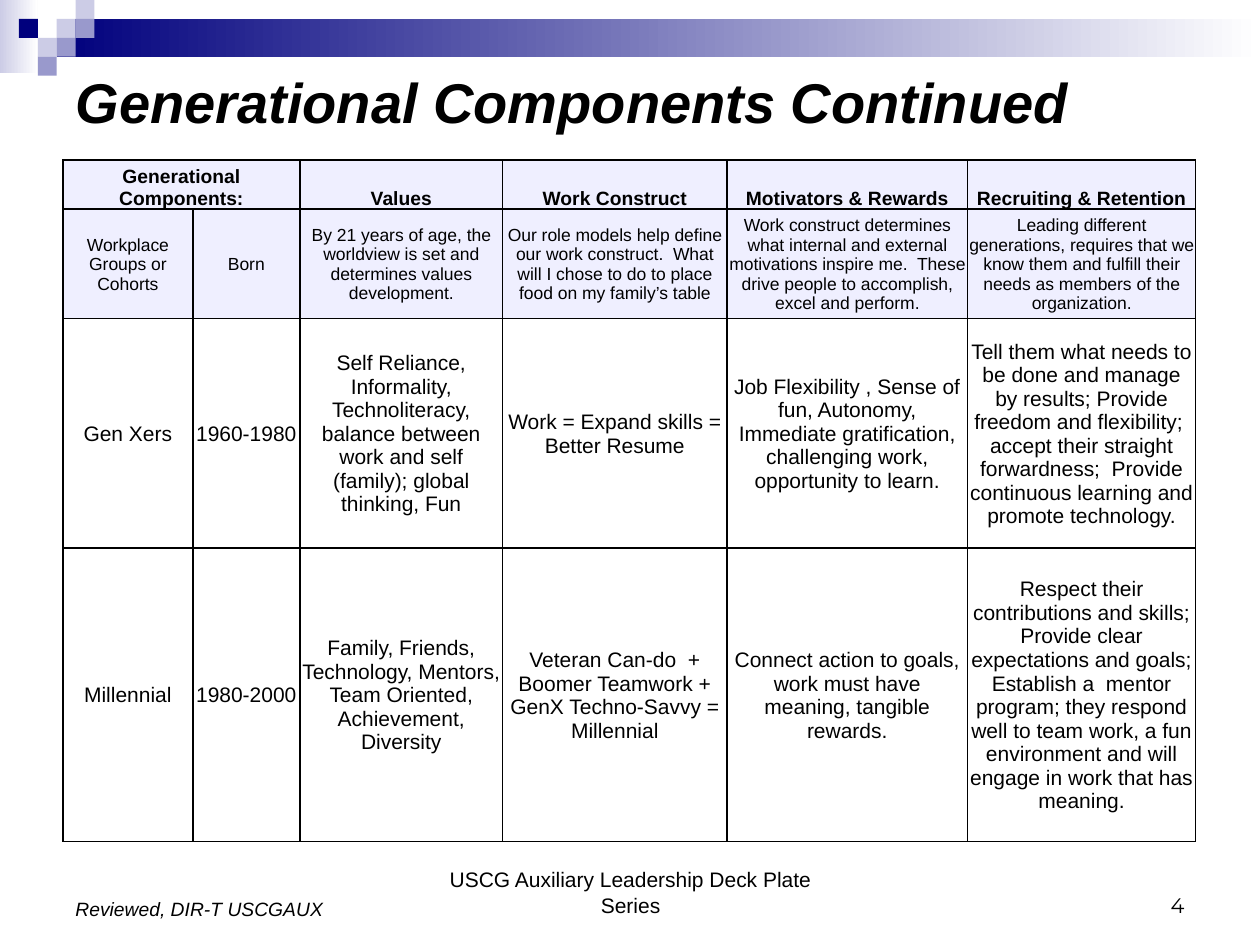
"""Build the slide of generational components for Gen Xers and Millennials."""
from dataclasses import dataclass

from lxml import etree
from pptx import Presentation
from pptx.dml.color import RGBColor
from pptx.enum.shapes import MSO_SHAPE
from pptx.enum.text import MSO_ANCHOR, MSO_AUTO_SIZE, PP_ALIGN
from pptx.oxml.ns import qn
from pptx.util import Inches, Pt

RECTANGLE = MSO_SHAPE.RECTANGLE
LEFT, CENTER, RIGHT = PP_ALIGN.LEFT, PP_ALIGN.CENTER, PP_ALIGN.RIGHT
MIDDLE, BOTTOM = MSO_ANCHOR.MIDDLE, MSO_ANCHOR.BOTTOM


@dataclass(frozen=True)
class Theme:
    navy: str = "00007D"
    violet: str = "9999CC"
    lavender: str = "CCCCE6"
    header: str = "EFEFFF"
    white: str = "FFFFFF"
    black: str = "000000"
    font: str = "Arial"
    number_font: str = "Montserrat"
    title_size: int = 32
    body_size: int = 12
    heading_size: int = 11
    note_size: int = 10


theme = Theme()


def format_text(frame, text, size, alignment, anchor, font=theme.font, bold=False, italic=False):
    frame.text = text
    frame.vertical_anchor = anchor
    paragraph = frame.paragraphs[0]
    paragraph.alignment = alignment
    paragraph.font.name = font
    paragraph.font.size = Pt(size)
    paragraph.font.bold = bold
    paragraph.font.italic = italic
    paragraph.font.color.rgb = RGBColor.from_string(theme.black)


def draw_borders(cell):
    properties = cell._tc.get_or_add_tcPr()
    for side in ("a:lnL", "a:lnR", "a:lnT", "a:lnB"):
        line = etree.SubElement(properties, qn(side), w=str(Pt(1)))
        fill = etree.SubElement(line, qn("a:solidFill"))
        etree.SubElement(fill, qn("a:srgbClr"), val=theme.black)


presentation = Presentation()
presentation.slide_width = Inches(10)
presentation.slide_height = Inches(7.5)
slide = presentation.slides.add_slide(presentation.slide_layouts[5])

GRID = Inches(0.15)
blocks = [
    (0, 0, 2, 3.87, theme.lavender, theme.white),
    (3, 1, 63.67, 2, theme.navy, theme.white),
    (3, 1, 1, 1, theme.lavender, None),
    (4, 0, 1, 1, theme.lavender, None),
    (4, 1, 1, 1, theme.violet, None),
    (2, 2, 1, 1, theme.lavender, None),
    (1, 1, 1, 1, theme.navy, None),
    (3, 2, 1, 1, theme.violet, None),
    (2, 3, 1, 1, theme.violet, None),
]
for column, row, width, height, color, end_color in blocks:
    block = slide.shapes.add_shape(
        RECTANGLE, *(int(GRID * cells) for cells in (column, row, width, height)))
    block.shadow.inherit = False
    block.line.fill.background()
    if end_color:
        block.fill.gradient()
        block.fill.gradient_angle = 0
        for stop, stop_color in zip(block.fill.gradient_stops, (color, end_color)):
            stop.color.rgb = RGBColor.from_string(stop_color)
    else:
        block.fill.solid()
        block.fill.fore_color.rgb = RGBColor.from_string(color)

title = slide.shapes.title
title.left, title.top, title.width, title.height = map(Inches, (0.5, 0.5, 9, 0.61))
title.text_frame.auto_size = MSO_AUTO_SIZE.NONE
format_text(title.text_frame, "Generational Components Continued", theme.title_size,
            LEFT, MIDDLE, bold=True, italic=True)

column_widths = [1.03, 0.85, 1.61, 1.78, 1.91, 1.81]
row_heights = [0.39, 0.87, 1.82, 2.33]
row_styles = [
    (theme.heading_size, BOTTOM, True, theme.header),
    (theme.note_size, MIDDLE, False, theme.header),
    (theme.body_size, MIDDLE, False, None),
    (theme.body_size, MIDDLE, False, None),
]
table_rows = [
    ["Generational Components:", "", "Values", "Work Construct",
     "Motivators & Rewards", "Recruiting & Retention"],
    ["Workplace Groups or Cohorts", "Born",
     "By 21 years of age, the worldview is set and determines values development.",
     "Our role models help define our work construct.  What will I chose to do to place "
     "food on my family’s table",
     "Work construct determines what internal and external motivations inspire me.  "
     "These drive people to accomplish, excel and perform.",
     "Leading different generations, requires that we know them and fulfill their needs "
     "as members of the organization."],
    ["Gen Xers", "1960-1980",
     "Self Reliance, Informality, Technoliteracy, balance between work and self (family); "
     "global thinking, Fun",
     "Work = Expand skills = Better Resume",
     "Job Flexibility , Sense of fun, Autonomy, Immediate gratification, challenging work, "
     "opportunity to learn.",
     "Tell them what needs to be done and manage by results; Provide freedom and "
     "flexibility;  accept their straight forwardness;  Provide continuous learning and "
     "promote technology."],
    ["Millennial", "1980-2000",
     "Family, Friends, Technology, Mentors, Team Oriented, Achievement, Diversity",
     "Veteran Can-do  + Boomer Teamwork + GenX Techno-Savvy = Millennial",
     "Connect action to goals, work must have meaning, tangible rewards.",
     "Respect their contributions and skills; Provide clear expectations and goals; "
     "Establish a  mentor program; they respond well to team work, a fun environment and "
     "will engage in work that has meaning."],
]
table = slide.shapes.add_table(
    len(row_heights), len(column_widths), Inches(0.5), Inches(1.27),
    Inches(sum(column_widths)), Inches(sum(row_heights))).table
table.first_row = False
table.horz_banding = False
for column, width in zip(table.columns, column_widths):
    column.width = Inches(width)
for row, height, texts, style in zip(table.rows, row_heights, table_rows, row_styles):
    row.height = Inches(height)
    size, anchor, bold, color = style
    for cell, text in zip(row.cells, texts):
        draw_borders(cell)
        cell.margin_left = cell.margin_right = cell.margin_top = Inches(0.01)
        cell.margin_bottom = 0
        format_text(cell.text_frame, text, size, CENTER, anchor, bold=bold)
        cell.vertical_anchor = anchor
        if color:
            cell.fill.solid()
            cell.fill.fore_color.rgb = RGBColor.from_string(color)
        else:
            cell.fill.background()
table.cell(0, 0).merge(table.cell(0, 1))

footers = [
    ((3.42, 6.83, 3.17, 0.5), "USCG Auxiliary Leadership Deck Plate Series",
     theme.body_size, CENTER, theme.font, False),
    ((7.17, 6.83, 2.33, 0.5), "4", theme.body_size, RIGHT, theme.number_font, False),
    ((0.5, 7.06, 2.19, 0.29), "Reviewed, DIR-T USCGAUX",
     theme.heading_size, LEFT, theme.font, True),
]
for bounds, text, size, alignment, font, italic in footers:
    footer = slide.shapes.add_textbox(*map(Inches, bounds))
    footer.text_frame.word_wrap = True
    format_text(footer.text_frame, text, size, alignment, BOTTOM, font=font, italic=italic)

presentation.save("out.pptx")
